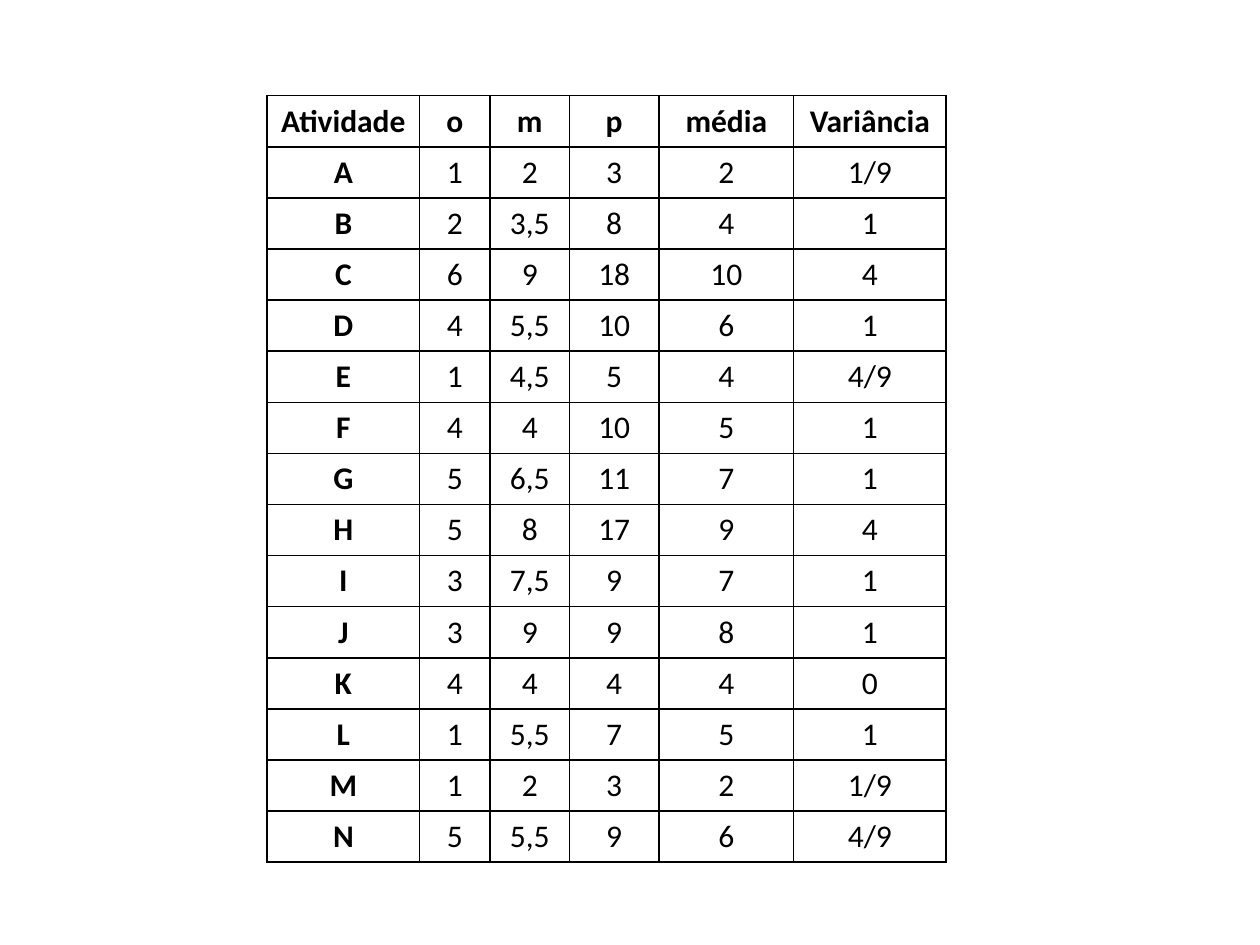
from dataclasses import astuple, dataclass

from lxml import etree
from pptx import Presentation
from pptx.dml.color import RGBColor
from pptx.enum.text import MSO_ANCHOR, PP_ALIGN
from pptx.oxml.ns import qn
from pptx.util import Inches, Pt

CENTER = PP_ALIGN.CENTER
MIDDLE = MSO_ANCHOR.MIDDLE
BLANK_LAYOUT = 6
BLACK = "000000"

SLIDE_WIDTH, SLIDE_HEIGHT = Inches(10), Inches(7.5)
TABLE_LEFT, TABLE_TOP, TABLE_HEIGHT = Inches(2.12), Inches(0.76), Inches(6.08)
COLUMN_WIDTHS = [Inches(width) for width in (1.21, 0.56, 0.63, 0.71, 1.07, 1.21)]
BORDER_SIDES = ("a:lnL", "a:lnR", "a:lnT", "a:lnB")


@dataclass
class Activity:
    """One table row: name, three time estimates, mean and variance."""
    name: str
    optimistic: str
    likely: str
    pessimistic: str
    mean: str
    variance: str


HEADER = Activity("Atividade", "o", "m", "p", "média", "Variância")
ACTIVITIES = [
    Activity("A", "1", "2", "3", "2", "1/9"),
    Activity("B", "2", "3,5", "8", "4", "1"),
    Activity("C", "6", "9", "18", "10", "4"),
    Activity("D", "4", "5,5", "10", "6", "1"),
    Activity("E", "1", "4,5", "5", "4", "4/9"),
    Activity("F", "4", "4", "10", "5", "1"),
    Activity("G", "5", "6,5", "11", "7", "1"),
    Activity("H", "5", "8", "17", "9", "4"),
    Activity("I", "3", "7,5", "9", "7", "1"),
    Activity("J", "3", "9", "9", "8", "1"),
    Activity("K", "4", "4", "4", "4", "0"),
    Activity("L", "1", "5,5", "7", "5", "1"),
    Activity("M", "1", "2", "3", "2", "1/9"),
    Activity("N", "5", "5,5", "9", "6", "4/9"),
]


def color(value: str) -> RGBColor:
    return RGBColor.from_string(value)


def write_text(frame, text: str, *, size: float = 18, bold: bool = False,
               font: str = "Calibri", fill: str = BLACK) -> None:
    para = frame.paragraphs[0]
    para.alignment = CENTER
    span = para.add_run()
    span.text = text
    span.font.name = font
    span.font.size = Pt(size)
    span.font.bold = bold
    span.font.color.rgb = color(fill)


def add_borders(cell, line_color: str = BLACK, width: float = 1) -> None:
    properties = cell._tc.get_or_add_tcPr()
    for index, side in enumerate(BORDER_SIDES):
        line = etree.Element(qn(side), w=str(Pt(width)))
        fill = etree.SubElement(line, qn("a:solidFill"))
        etree.SubElement(fill, qn("a:srgbClr"), val=str(color(line_color)))
        properties.insert(index, line)


def add_activity_table(slide, rows: list[Activity]) -> None:
    frame = slide.shapes.add_table(len(rows), len(COLUMN_WIDTHS), TABLE_LEFT, TABLE_TOP,
                                   sum(COLUMN_WIDTHS), TABLE_HEIGHT)
    table = frame.table
    table.horz_banding = False
    for column, width in zip(table.columns, COLUMN_WIDTHS):
        column.width = width
    for row_index, activity in enumerate(rows):
        for column_index, text in enumerate(astuple(activity)):
            cell = table.cell(row_index, column_index)
            cell.fill.background()
            cell.vertical_anchor = MIDDLE
            write_text(cell.text_frame, text, bold=row_index == 0 or column_index == 0)
            add_borders(cell)


def main() -> None:
    deck = Presentation()
    deck.slide_width, deck.slide_height = SLIDE_WIDTH, SLIDE_HEIGHT
    page = deck.slides.add_slide(deck.slide_layouts[BLANK_LAYOUT])
    add_activity_table(page, [HEADER, *ACTIVITIES])
    deck.save("out.pptx")


if __name__ == "__main__":
    main()
